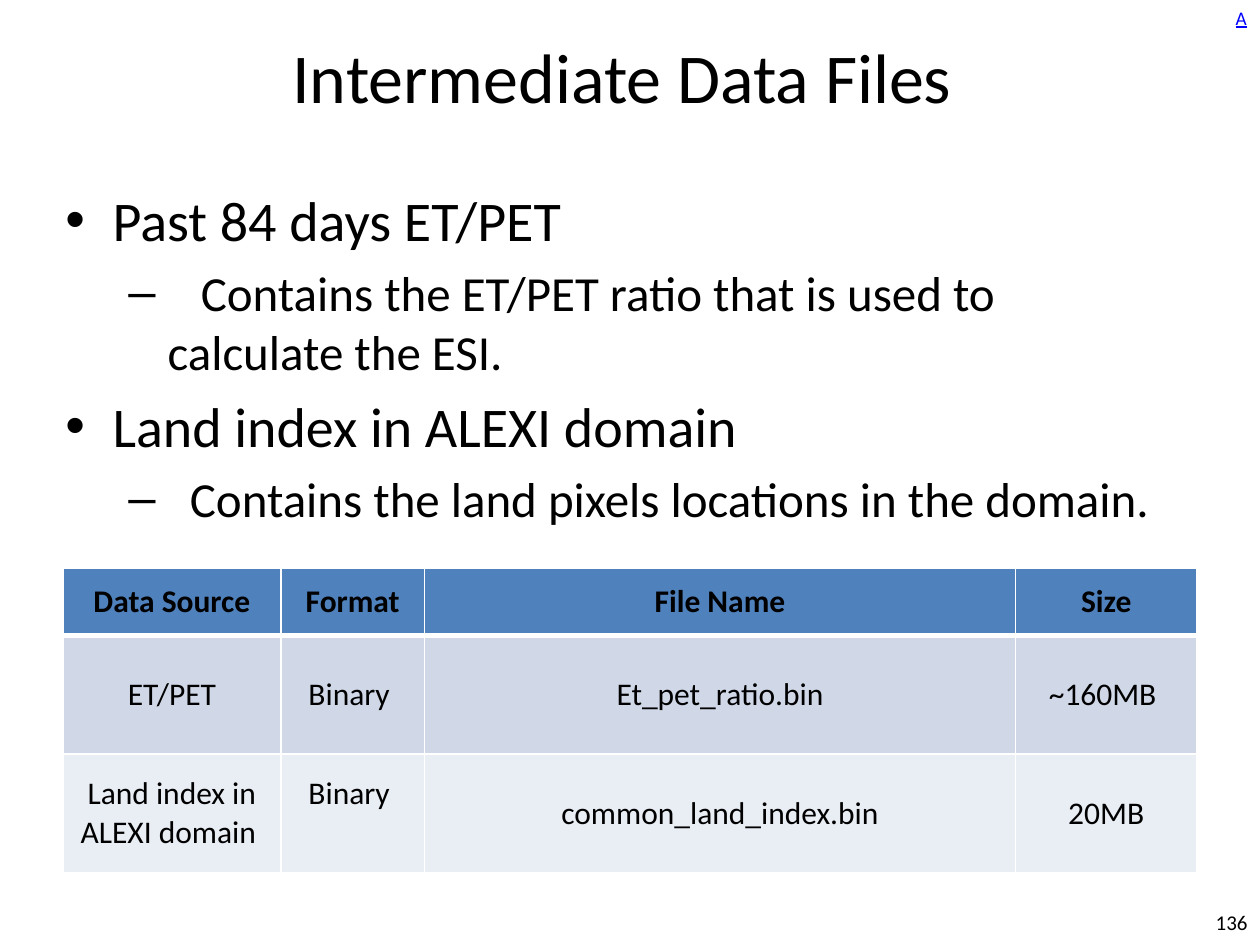
from pptx import Presentation
from pptx.dml.color import RGBColor
from pptx.enum.text import MSO_ANCHOR, PP_ALIGN
from pptx.oxml.ns import qn
from pptx.util import Cm, Pt
from lxml.etree import SubElement

THEME = {
    "font": "Calibri",
    "text": "000000", "link": "0000FF", "border": "FFFFFF",
    "head_fill": "4F81BD", "band_fills": ["D0D8E8", "E9EDF4"],
    "title": 40, "levels": [32, 28], "cell": 18, "number": 12, "corner": 11,
}

# Text boxes: text, (left, top, width, height) in cm, size, paragraph and frame formats
LABELS = [
    ("136", (23.5, 18.08, 1.9, 1.02), THEME["number"],
     {"alignment": PP_ALIGN.RIGHT}, {"vertical_anchor": MSO_ANCHOR.MIDDLE}, {}),
    ("A", (24.66, 0, 0.74, 0.74), THEME["corner"],
     {}, {"word_wrap": False}, {"underline": True, "color": THEME["link"]}),
    ("Intermediate Data Files ", (1.27, 0.76, 22.86, 1.78), THEME["title"],
     {"alignment": PP_ALIGN.CENTER, "line_spacing": 0.85},
     {"vertical_anchor": MSO_ANCHOR.MIDDLE}, {}),
]

# Outline: level, extra lead before the text in cm, text
OUTLINE = [
    (0, 0, "Past 84 days ET/PET"),
    (1, 0.67, "Contains the ET/PET ratio that is used to calculate the ESI."),
    (0, 0, "Land index in ALEXI domain"),
    (1, 0.45, "Contains the land pixels locations in the domain."),
]
OUTLINE_BOX = (1.07, 3.61, 22.86, 9.32)
BULLETS = [("•", 0.95, 0.95), ("–", 2.06, 0.79)]  # mark, margin, hanging in cm

TABLE = [
    ["Data Source", "Format", "File Name", "Size"],
    ["ET/PET", "Binary ", "Et_pet_ratio.bin", "~160MB "],
    ["Land index in ALEXI domain ", "Binary ", "common_land_index.bin", "20MB"],
]
TABLE_BOX = (1.27, 11.45, 22.86, 6.14)
COL_WIDTHS = [4.39, 2.9, 11.91, 3.66]
ROW_HEIGHTS = [1.36, 2.39, 2.39]
RAISED_CELL = (2, 1)


def set_all(obj, formats):
    for name, value in formats.items():
        setattr(obj, name, value)


def add_run(p, text, size, color=THEME["text"], **formats):
    r = p.add_run()
    r.text = text
    set_all(r.font, {"name": THEME["font"], "size": Pt(size), **formats})
    r.font.color.rgb = RGBColor.from_string(color)


def add_frame(slide, box, **formats):
    tf = slide.shapes.add_textbox(*map(Cm, box)).text_frame
    set_all(tf, {"word_wrap": True, **formats})
    return tf


def set_bullet(p, level, lead):
    """Give a paragraph its hanging bullet and, for a lead, a tab stop after it."""
    mark, margin, hanging = BULLETS[level]
    pPr = p._p.get_or_add_pPr()
    pPr.set("marL", str(Cm(margin)))
    pPr.set("indent", str(-Cm(hanging)))
    SubElement(pPr, qn("a:buFont"), typeface="Arial")
    SubElement(pPr, qn("a:buChar"), char=mark)
    if lead:
        tabs = SubElement(pPr, qn("a:tabLst"))
        # Serves viewers that measure stops from the margin or from the box edge
        for stop in (lead, margin + lead):
            SubElement(tabs, qn("a:tab"), pos=str(Cm(stop)), algn="l")


def add_outline(slide):
    tf = add_frame(slide, OUTLINE_BOX)
    for i, (level, lead, text) in enumerate(OUTLINE):
        p = tf.add_paragraph() if i else tf.paragraphs[0]
        size = THEME["levels"][level]
        p.level = level
        set_bullet(p, level, lead)
        if i:
            p.space_before = Pt(size * 0.2)
        add_run(p, "\t" + text if lead else text, size)


def set_borders(cell, bottom, top):
    tcPr = cell._tc.get_or_add_tcPr()
    for side, width in (("L", 1), ("R", 1), ("T", top), ("B", bottom)):
        ln = SubElement(tcPr, qn(f"a:ln{side}"), w=str(Pt(width)))
        fill = SubElement(ln, qn("a:solidFill"))
        SubElement(fill, qn("a:srgbClr"), val=THEME["border"])


def add_data_table(slide):
    table = slide.shapes.add_table(len(TABLE), len(TABLE[0]), *map(Cm, TABLE_BOX)).table
    for col, width in zip(table.columns, COL_WIDTHS):
        col.width = Cm(width)
    for i, (row, height) in enumerate(zip(table.rows, ROW_HEIGHTS)):
        row.height = Cm(height)
        color = THEME["band_fills"][i - 1] if i else THEME["head_fill"]
        for cell, text in zip(row.cells, TABLE[i]):
            set_borders(cell, bottom=1 if i else 3, top=3 if i == 1 else 1)
            cell.fill.solid()
            cell.fill.fore_color.rgb = RGBColor.from_string(color)
            cell.vertical_anchor = MSO_ANCHOR.MIDDLE
            p = cell.text_frame.paragraphs[0]
            p.alignment = PP_ALIGN.CENTER
            add_run(p, text, THEME["cell"], bold=i == 0)
    table.cell(*RAISED_CELL).margin_bottom = Cm(0.9)


def main():
    prs = Presentation()
    prs.slide_width, prs.slide_height = Cm(25.4), Cm(19.05)
    slide = prs.slides.add_slide(prs.slide_layouts[6])
    for text, box, size, para, frame, font in LABELS:
        p = add_frame(slide, box, **frame).paragraphs[0]
        set_all(p, para)
        add_run(p, text, size, **font)
    add_outline(slide)
    add_data_table(slide)
    prs.save("out.pptx")


if __name__ == "__main__":
    main()
